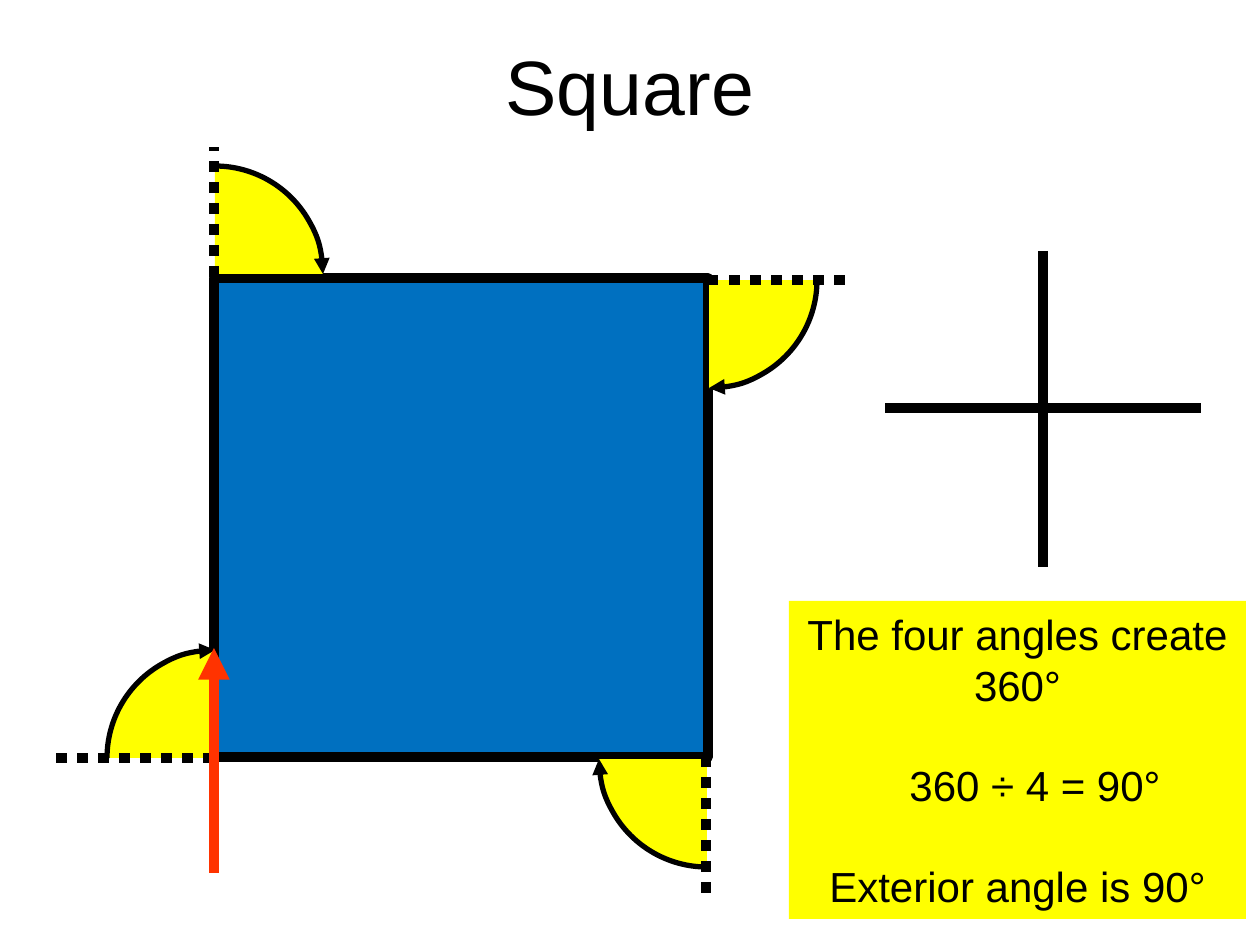
from lxml.etree import SubElement
from pptx import Presentation
from pptx.dml.color import RGBColor
from pptx.enum.dml import MSO_LINE
from pptx.enum.shapes import MSO_CONNECTOR, MSO_SHAPE
from pptx.enum.text import MSO_ANCHOR, PP_ALIGN
from pptx.oxml import parse_xml
from pptx.oxml.ns import nsdecls, qn
from pptx.util import Emu, Pt

BLACK = RGBColor(0x00, 0x00, 0x00)
BLUE = RGBColor(0x00, 0x70, 0xC0)
YELLOW = RGBColor(0xFF, 0xFF, 0x00)
RED = RGBColor(0xFF, 0x33, 0x00)
RADIUS = 108


def px(v):
    """Turn pixels into EMU."""
    return Emu(round(v * 914400 / 126))


def set_line(line, width, color=BLACK, dash=None, arrow=None):
    """Format an outline, with an optional dash and headEnd or tailEnd arrow."""
    line.width = Pt(width)
    line.color.rgb = color
    if dash:
        line.dash_style = dash
    if arrow:
        SubElement(line.color._xFill.getparent(), qn(f"a:{arrow}"), type="triangle")


def add_rect(shapes, x, y, w, h, fill, border=0):
    """Add a filled rectangle, bordered when a width is given."""
    sp = shapes.add_shape(MSO_SHAPE.RECTANGLE, px(x), px(y), px(w), px(h))
    sp.shadow.inherit = False
    sp.fill.solid()
    sp.fill.fore_color.rgb = fill
    if border:
        set_line(sp.line, border)
    else:
        sp.line.fill.background()
    return sp


def add_line(shapes, x1, y1, x2, y2, **fmt):
    """Add a thick straight connector."""
    cn = shapes.add_connector(MSO_CONNECTOR.STRAIGHT, px(x1), px(y1), px(x2), px(y2))
    set_line(cn.line, 6, **fmt)
    SubElement(cn._element.spPr, qn("a:effectLst"))


def add_angle(shapes, x, y, rotation):
    """Add a filled quarter circle whose arc alone is drawn, with an arrow."""
    r = px(RADIUS)
    fb = shapes.build_freeform(0, r)
    fb.add_line_segments([(r, 0), (r, r)])
    sp = fb.convert_to_shape(px(x), px(y))
    arc = (f'<a:moveTo><a:pt x="0" y="{r}"/></a:moveTo>'
           f'<a:arcTo wR="{r}" hR="{r}" stAng="10800000" swAng="5400000"/>')
    paths = parse_xml(
        f'<a:pathLst {nsdecls("a")}>'
        f'<a:path w="{r}" h="{r}" fill="none">{arc}</a:path>'
        f'<a:path w="{r}" h="{r}" stroke="0">{arc}'
        f'<a:lnTo><a:pt x="{r}" y="{r}"/></a:lnTo><a:close/></a:path></a:pathLst>')
    old = sp._element.spPr.find(f'.//{qn("a:pathLst")}')
    old.getparent().replace(old, paths)
    sp.shadow.inherit = False
    sp.rotation = rotation
    sp.fill.solid()
    sp.fill.fore_color.rgb = YELLOW
    set_line(sp.line, 3, arrow="tailEnd")


def set_text(sp, lines, size, spacing=None, gap=0, indents=()):
    """Write centred paragraphs with a gap between and optional indents by line."""
    tf = sp.text_frame
    tf.word_wrap = True
    tf.vertical_anchor = MSO_ANCHOR.MIDDLE
    indents = dict(indents)
    for i, text in enumerate(lines):
        p = tf.paragraphs[0] if i == 0 else tf.add_paragraph()
        p.alignment = PP_ALIGN.CENTER
        p.line_spacing = spacing
        p.space_before = Pt(gap if i else 0)
        if i in indents:
            p._p.get_or_add_pPr().set("marL", str(px(indents[i])))
        r = p.add_run()
        r.text = text
        r.font.name = "Arial"
        r.font.size = Pt(size)
        r.font.color.rgb = BLACK


def main():
    """Build the slide on the exterior angles of a square."""
    prs = Presentation()
    prs.slide_width, prs.slide_height = px(1260), px(945)
    shapes = prs.slides.add_slide(prs.slide_layouts[6]).shapes

    add_rect(shapes, 214, 278, 494, 479, BLUE, border=6)
    title = shapes.add_textbox(px(63), px(6), px(1134), px(158))
    set_text(title, ["Square"], 44)

    for x, y, rotation in [(215, 166, 90), (709, 280, 180),
                           (599, 759, 270), (107, 650, 0)]:
        add_angle(shapes, x, y, rotation)
    for ends in [(214, 277, 214, 147), (708, 280, 853, 280),
                 (706, 756, 706, 897), (214, 758, 54, 758)]:
        add_line(shapes, *ends, dash=MSO_LINE.ROUND_DOT)
    add_line(shapes, 214, 648, 214, 873, color=RED, arrow="headEnd")

    cross = shapes.add_group_shape().shapes
    add_line(cross, 1043, 251, 1043, 567)
    add_line(cross, 1201, 408, 885, 408)

    note = add_rect(shapes, 789, 601, 457, 318, YELLOW)
    set_text(note, ["The four angles create 360°", "360 ÷ 4 = 90°",
                    "Exterior angle is 90°"],
             24, spacing=Pt(28.8), gap=28.8, indents={1: 35})
    prs.save("out.pptx")


if __name__ == "__main__":
    main()
